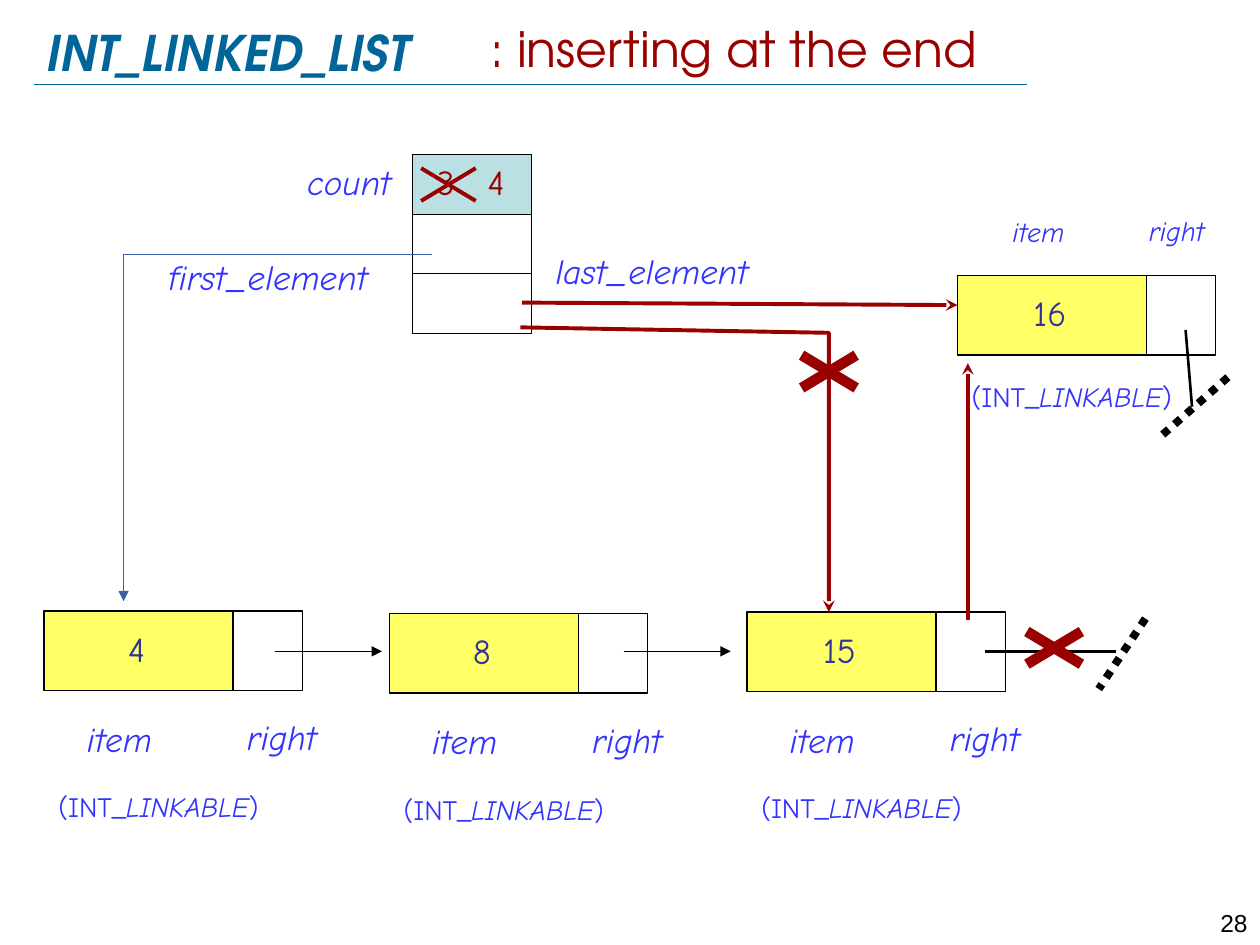
"""Build the slide on inserting a cell at the end of INT_LINKED_LIST."""
from dataclasses import dataclass

import pptx
import pptx.dml.color
import pptx.enum.dml
import pptx.enum.shapes
import pptx.enum.text
import pptx.oxml
import pptx.oxml.ns
import pptx.util
from pptx.util import Cm

Align = pptx.enum.text.PP_ALIGN
Anchor = pptx.enum.text.MSO_ANCHOR
AutoSize = pptx.enum.text.MSO_AUTO_SIZE
RGB = pptx.dml.color.RGBColor.from_string


@dataclass(frozen=True)
class Theme:
    heading_font: str = "TeX Gyre Adventor"
    label_font: str = "Comic Neue"
    number_font: str = "Arial"
    heading: str = "006699"
    change: str = "990000"
    label: str = "3333FF"
    value: str = "333399"
    item_fill: str = "FFFF66"
    count_fill: str = "BBE0E3"
    first_link: str = "3E609E"
    ink: str = "000000"
    heading_size: int = 28
    label_size: int = 20
    small_size: int = 16
    number_size: int = 14


theme = Theme()


def add_label(text, left, top, width, height, size=theme.label_size, color=theme.label,
              font=theme.label_font, italic=False, align=Align.LEFT, anchor=Anchor.TOP):
    box = slide.shapes.add_textbox(Cm(left), Cm(top), Cm(width), Cm(height))
    frame = box.text_frame
    frame.word_wrap = True
    frame.vertical_anchor = anchor
    paragraph = frame.paragraphs[0]
    paragraph.alignment = align
    paragraph.font.name = font
    paragraph.font.size = pptx.util.Pt(size)
    paragraph.font.italic = italic
    paragraph.font.color.rgb = RGB(color)
    for position, part in enumerate(text.split("|")):
        run = paragraph.add_run()
        run.text = part
        if "|" in text:
            run.font.italic = position == 1


def add_line(canvas, points, color, width, head=None, dash=None):
    start, *others = [(Cm(x), Cm(y)) for x, y in points]
    if len(others) == 1:
        line = canvas.add_connector(pptx.enum.shapes.MSO_CONNECTOR.STRAIGHT, *start, *others[0])
    else:
        builder = canvas.build_freeform(*start)
        builder.add_line_segments(others, close=False)
        line = builder.convert_to_shape()
        line.fill.background()
    line.line.color.rgb = RGB(color)
    line.line.width = pptx.util.Pt(width)
    if dash:
        line.line.dash_style = dash
    properties = line.element.spPr
    if head:
        outline = properties.find(pptx.oxml.ns.qn("a:ln"))
        outline.append(pptx.oxml.parse_xml(
            f'<a:tailEnd {pptx.oxml.ns.nsdecls("a")} type="{head}"/>'))
    properties.append(pptx.oxml.parse_xml(f'<a:effectLst {pptx.oxml.ns.nsdecls("a")}/>'))


deck = pptx.Presentation()
deck.slide_width, deck.slide_height = Cm(25.4), Cm(19.05)
slide = deck.slides.add_slide(deck.slide_layouts[5])

title = slide.shapes.title
title.left, title.top, title.width, title.height = Cm(0.69), Cm(0.33), Cm(22.07), Cm(1.22)
title.text_frame.text = "INT_LINKED_LIST"
title.text_frame.auto_size = AutoSize.NONE
title.text_frame.vertical_anchor = Anchor.TOP
heading = title.text_frame.paragraphs[0]
heading.alignment = Align.LEFT
heading.font.name = theme.heading_font
heading.font.size = pptx.util.Pt(theme.heading_size)
heading.font.bold = heading.font.italic = True
heading.font.color.rgb = RGB(theme.heading)

add_label(": inserting at the end", 9.63, -0.03, 11.4, 2, theme.heading_size, theme.change,
          theme.heading_font, anchor=Anchor.MIDDLE)
add_line(slide.shapes, [(0.69, 1.7), (20.7, 1.7)], theme.heading, 0.25)
add_label("28", 24, 18.19, 1.4, 0.61, theme.number_size, theme.ink, theme.number_font,
          align=Align.RIGHT)

item_width, link_width, cell_height = 3.81, 1.4, 1.6
bottom_row = dict(size=theme.label_size, item=(0.61, 2.01), right=(3.84, 1.98), kind_drop=3.48)
top_row = dict(size=theme.small_size, item=(0.86, -1.35), right=(3.61, -1.37), kind_drop=1.96)
cells = [
    ("4", 0.89, 12.32, bottom_row),
    ("8", 7.85, 12.37, bottom_row),
    ("15", 15.06, 12.34, bottom_row),
    ("16", 19.3, 5.56, top_row),
]
boxes = [(8.31, 3.12 + 1.2 * row, 2.41, 1.2, theme.count_fill if row == 0 else None)
         for row in range(3)]
for value, left, top, row in cells:
    boxes.append((left, top, item_width, cell_height, theme.item_fill))
    boxes.append((left + item_width, top, link_width, cell_height, None))

for left, top, width, height, fill in boxes:
    box = slide.shapes.add_shape(pptx.enum.shapes.MSO_SHAPE.RECTANGLE,
                                 Cm(left), Cm(top), Cm(width), Cm(height))
    box.shadow.inherit = False
    box.line.color.rgb = RGB(theme.ink)
    box.line.width = pptx.util.Pt(0.75)
    if fill:
        box.fill.solid()
        box.fill.fore_color.rgb = RGB(fill)
    else:
        box.fill.background()

for value, left, top, row in cells:
    add_label(value, left, top + 0.2, 3.73, 1.09, color=theme.value,
              align=Align.CENTER, anchor=Anchor.MIDDLE)
    for field, width in (("item", 2.01), ("right", 2.39)):
        across, down = row[field]
        add_label(field, left + across, top + down, width, 1.09, row["size"], italic=True)
    add_label("(INT_|LINKABLE|)", left + 0.04, top + row["kind_drop"], 5.4, 0.94,
              theme.small_size)

for field, left, top, width in (("count", 5.94, 3.12, 2.59),
                                ("first_element", 3.15, 5.03, 5.28),
                                ("last_element", 10.95, 4.9, 7.01)):
    add_label(field, left, top, width, 1.09, italic=True)
for count, left in (("3", 8.56), ("4", 9.58)):
    add_label(count, left, 3.12, 2.59, 1.09, color=theme.change)

dotted = pptx.enum.dml.MSO_LINE.ROUND_DOT
links = [
    ([(5.54, 13.13), (7.7, 13.13)], theme.ink, 0.75, "triangle", None),
    ([(12.57, 13.13), (14.73, 13.13)], theme.ink, 0.75, "triangle", None),
    ([(19.86, 13.13), (22.5, 13.13)], theme.ink, 1.5, None, None),
    ([(23.09, 12.47), (22.15, 13.89)], theme.ink, 4.5, None, dotted),
    ([(23.9, 6.65), (24.03, 8.2)], theme.ink, 1.5, None, None),
    ([(23.44, 8.76), (24.77, 7.59)], theme.ink, 4.5, None, dotted),
    ([(8.71, 5.13), (2.49, 5.13)], theme.first_link, 0.75, None, None),
    ([(2.49, 5.13), (2.49, 12.12)], theme.first_link, 0.75, "triangle", None),
    ([(19.51, 12.5), (19.51, 7.32)], theme.change, 2.25, "stealth", None),
    ([(10.49, 6.6), (16.71, 6.71), (16.71, 12.34)], theme.change, 2.25, "stealth", None),
    ([(10.52, 6.1), (19.3, 6.15)], theme.change, 2.25, "stealth", None),
]
for points, color, width, head, dash in links:
    add_line(slide.shapes, points, color, width, head, dash)

reach, rise = 0.55, 0.33
for x, y, width in ((21.25, 13.06, 6), (16.71, 7.49, 6), (9.04, 3.72, 2.25)):
    cross = slide.shapes.add_group_shape()
    for slope in (rise, -rise):
        add_line(cross.shapes, [(x - reach, y - slope), (x + reach, y + slope)],
                 theme.change, width)

deck.save("out.pptx")
